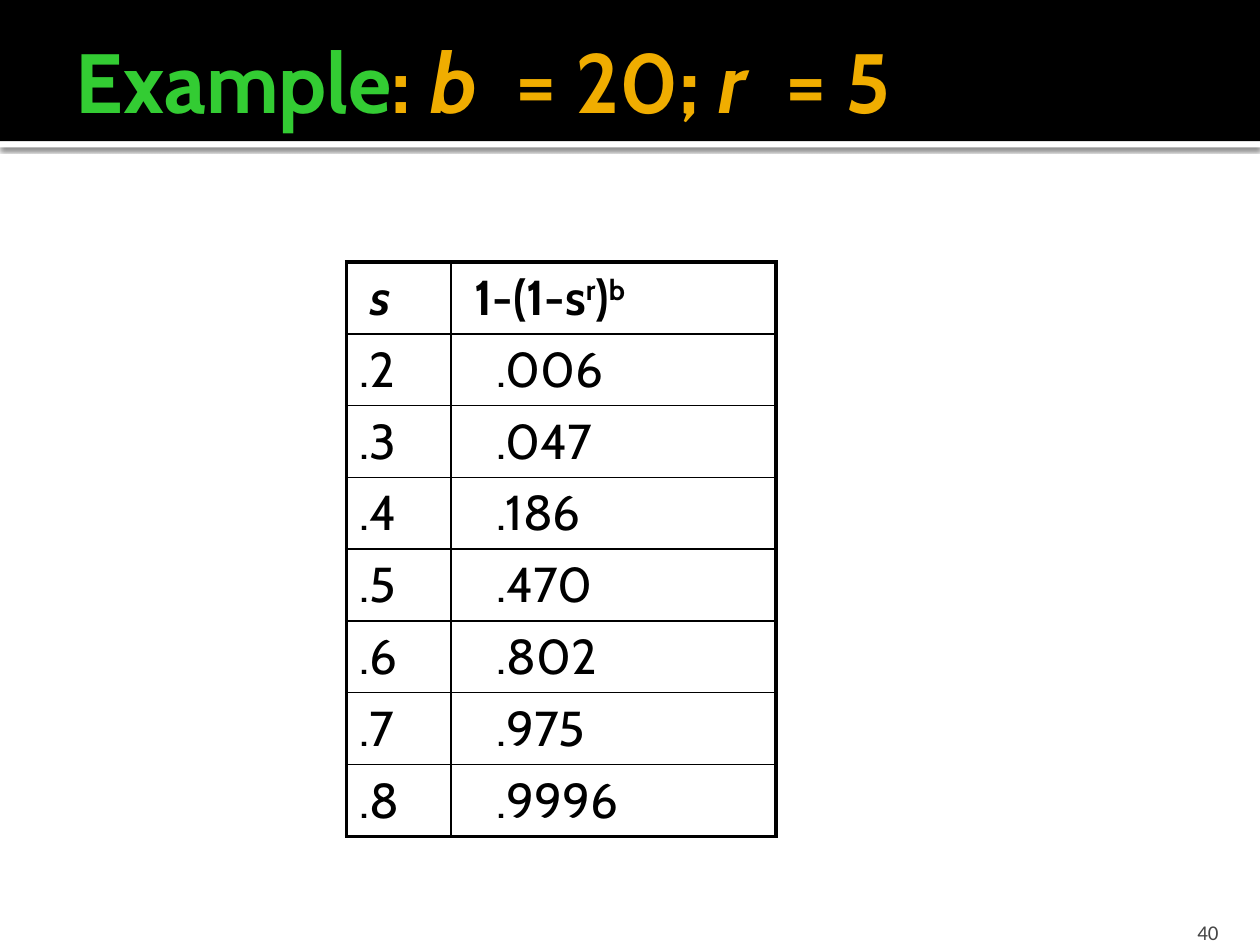
from lxml.etree import SubElement
from pptx import Presentation
from pptx.dml.color import RGBColor
from pptx.enum.shapes import MSO_SHAPE
from pptx.enum.text import MSO_ANCHOR, PP_ALIGN
from pptx.oxml.ns import qn
from pptx.util import Inches, Pt

BLACK, WHITE, GREEN, GOLD, GRAY = "000000", "FFFFFF", "33CC33", "F0AD00", "454545"
THIN, THICK = 1, 2.25
ROWS = [(".2", ".006"), (".3", ".047"), (".4", ".186"), (".5", ".470"),
        (".6", ".802"), (".7", ".975"), (".8", ".9996")]


def rgb(value):
    return RGBColor.from_string(value)


def add_run(p, text, color, raised=False, **fmt):
    r = p.add_run()
    r.text = text
    for name, value in {"name": "Cabin", **fmt}.items():
        setattr(r.font, name, value)
    r.font.color.rgb = rgb(color)
    if raised:
        r.font._element.set("baseline", "30000")


def add_bar(s, top, height, color):
    sp = s.shapes.add_shape(MSO_SHAPE.RECTANGLE, 0, Inches(top), Inches(10), Inches(height))
    sp.shadow.inherit = False
    sp.fill.solid()
    sp.fill.fore_color.rgb = rgb(color)
    sp.line.fill.background()
    return sp


def add_shadow(sp):
    effects = sp._element.spPr.find(qn("a:effectLst"))
    shadow = SubElement(effects, qn("a:outerShdw"), blurRad=str(Pt(2.5)),
                        dist=str(Pt(0.8)), dir="5400000", algn="t", rotWithShape="0")
    color = SubElement(shadow, qn("a:srgbClr"), val=BLACK)
    SubElement(color, qn("a:alpha"), val="60000")


def add_text(s, box, runs, align=PP_ALIGN.LEFT, **frame):
    tf = s.shapes.add_textbox(*(Inches(v) for v in box)).text_frame
    tf.word_wrap = True
    for name, value in frame.items():
        setattr(tf, name, value)
    p = tf.paragraphs[0]
    p.alignment = align
    for text, color, fmt in runs:
        add_run(p, text, color, **fmt)


def set_borders(cell, widths):
    tcPr = cell._tc.get_or_add_tcPr()
    for i, (side, width) in enumerate(widths.items()):
        ln = tcPr.makeelement(qn(f"a:{side}"), {"w": str(Pt(width))})
        SubElement(SubElement(ln, qn("a:solidFill")), qn("a:srgbClr"), val=BLACK)
        tcPr.insert(i, ln)


def fill_cell(cell, indent, runs):
    cell.fill.background()
    cell.margin_left = Inches(indent)
    for text, fmt in runs:
        add_run(cell.text_frame.paragraphs[0], text, BLACK, size=Pt(28), **fmt)


def add_probability_table(s):
    count = len(ROWS) + 1
    table = s.shapes.add_table(count, 2, Inches(2.75), Inches(2.08),
                               Inches(3.41), Inches(0.57 * count)).table
    table.first_row = table.horz_banding = False
    for col, width in zip(table.columns, (0.83, 2.58)):
        col.width = Inches(width)

    # Header
    bold, power = {"bold": True}, {"bold": True, "raised": True}
    fill_cell(table.cell(0, 0), 0.19, [("s", {"bold": True, "italic": True})])
    fill_cell(table.cell(0, 1), 0.19,
              [("1-(1-s", bold), ("r", power), (")", bold), ("b", power)])

    # Values
    for i, values in enumerate(ROWS, 1):
        for j, (text, indent) in enumerate(zip(values, (0.1, 0.36))):
            fill_cell(table.cell(i, j), indent, [(text, {})])

    # Thick outer frame, thin inner grid
    for i in range(count):
        for j in range(2):
            set_borders(table.cell(i, j), {
                "lnL": THICK if j == 0 else THIN,
                "lnR": THICK if j == 1 else THIN,
                "lnT": THICK if i == 0 else THIN,
                "lnB": THICK if i == count - 1 else THIN})


def main():
    prs = Presentation()
    prs.slide_width, prs.slide_height = Inches(10), Inches(7.5)
    s = prs.slides.add_slide(prs.slide_layouts[6])

    # Title band
    add_shadow(add_bar(s, 1.12, 0.05, WHITE))
    add_bar(s, 0, 1.12, BLACK)

    # Slide number
    add_text(s, (8.97, 7.2, 0.8, 0.3),
             [("40", GRAY, {"name": "Calibri", "size": Pt(12)})], PP_ALIGN.RIGHT,
             vertical_anchor=MSO_ANCHOR.BOTTOM, margin_bottom=0)

    # Title
    plain = {"size": Pt(48), "bold": True}
    italic = {**plain, "italic": True}
    add_text(s, (0.5, 0.17, 9.5, 0.92),
             [("Example", GREEN, plain), (": ", GOLD, plain), ("b", GOLD, italic),
              ("  = 20; ", GOLD, plain), ("r", GOLD, italic), ("  = 5", GOLD, plain)],
             vertical_anchor=MSO_ANCHOR.MIDDLE, margin_right=Inches(0.05))

    add_probability_table(s)
    prs.save("out.pptx")


if __name__ == "__main__":
    main()
